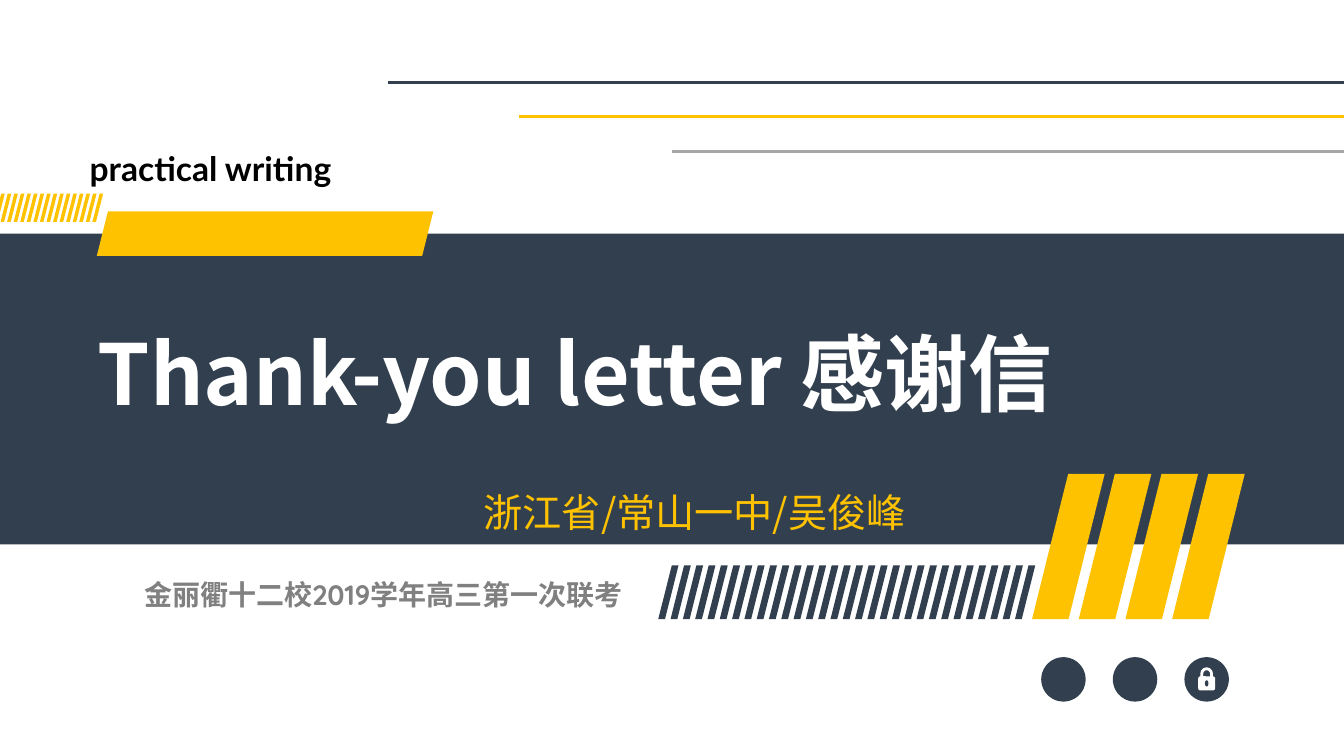
import dataclasses

import lxml.etree
import pptx
import pptx.dml.color
import pptx.enum.shapes
import pptx.enum.text
import pptx.oxml.ns
import pptx.util

Cm = pptx.util.Cm
Pt = pptx.util.Pt
Shape = pptx.enum.shapes.MSO_SHAPE
Align = pptx.enum.text.PP_ALIGN


@dataclasses.dataclass(frozen=True)
class Theme:
    navy: str = "323F4F"
    yellow: str = "FFC200"
    rule_gray: str = "A6A6A6"
    text_gray: str = "808080"
    white: str = "FFFFFF"
    black: str = "000000"
    title_size: int = 60
    author_size: int = 28
    label_size: int = 24
    exam_size: int = 20
    rule_width: float = 2.25
    title_font: str = "Noto Sans CJK SC"
    label_font: str = "Lato"
    exam_font: str = "Quicksand"


@dataclasses.dataclass(frozen=True)
class Box:
    """A rectangle in centimetres."""
    left: float
    top: float
    width: float
    height: float

    def inner(self, x, y, width, height):
        """Return the box at the given fractions of this one."""
        return Box(self.left + x * self.width, self.top + y * self.height,
                   width * self.width, height * self.height)

    def lengths(self):
        return Cm(self.left), Cm(self.top), Cm(self.width), Cm(self.height)


THEME = Theme()


def rgb(color):
    return pptx.dml.color.RGBColor.from_string(color)


def paint(shape, color):
    shape.shadow.inherit = False
    shape.fill.solid()
    shape.fill.fore_color.rgb = rgb(color)
    shape.line.fill.background()


def add_block(slide, kind, box, color):
    shape = slide.shapes.add_shape(kind, *box.lengths())
    paint(shape, color)
    return shape


def add_text(slide, box, text, *, size, color, font, bold=False,
             align=Align.LEFT, spacing=1.2, wrap=True):
    text_frame = slide.shapes.add_textbox(*box.lengths()).text_frame
    text_frame.word_wrap = wrap
    text_frame.auto_size = pptx.enum.text.MSO_AUTO_SIZE.SHAPE_TO_FIT_TEXT
    paragraph = text_frame.paragraphs[0]
    paragraph.alignment = align
    paragraph.line_spacing = spacing
    run = paragraph.add_run()
    run.text = text
    run.font.name = font
    run.font.size = Pt(size)
    run.font.bold = bold
    run.font.color.rgb = rgb(color)
    # Chinese characters take their own typeface
    east_asian = lxml.etree.SubElement(run.font._element, pptx.oxml.ns.qn("a:ea"))
    east_asian.set("typeface", THEME.title_font)


def add_stripes(slide, box, count, thickness, skew, color):
    """Spread slanted stripes evenly from the left to the right of the box."""
    step = (box.width - thickness - skew) / (count - 1)
    bottom = box.top + box.height
    for index in range(count):
        left = box.left + index * step
        corners = [(left + skew, box.top), (left + skew + thickness, box.top),
                   (left + thickness, bottom), (left, bottom)]
        points = [(Cm(x), Cm(y)) for x, y in corners]
        builder = slide.shapes.build_freeform(*points[0])
        builder.add_line_segments(points[1:], close=True)
        paint(builder.convert_to_shape(), color)


def add_rules(slide, box):
    """Three lines that start further right each time and end at the edge."""
    rules = [(0, THEME.navy), (3.3, THEME.yellow), (7.15, THEME.rule_gray)]
    step = box.height / (len(rules) - 1)
    for index, (indent, color) in enumerate(rules):
        y = Cm(box.top + index * step)
        rule = slide.shapes.add_connector(
            pptx.enum.shapes.MSO_CONNECTOR.STRAIGHT,
            Cm(box.left + indent), y, Cm(box.left + box.width), y)
        rule.line.color.rgb = rgb(color)
        rule.line.width = Pt(THEME.rule_width)
        lxml.etree.SubElement(rule._element.spPr, pptx.oxml.ns.qn("a:effectLst"))


def add_band(slide, box):
    """Navy band with the yellow tab, the title and the author."""
    left, top = box.left, box.top
    add_block(slide, Shape.RECTANGLE, box, THEME.navy)
    add_block(slide, Shape.PARALLELOGRAM, Box(left + 2.44, top - 0.56, 8.48, 1.12),
              THEME.yellow)
    add_text(slide, Box(left + 2.21, top + 1.58, 29.13, 3.33), "Thank-you letter 感谢信",
             size=THEME.title_size, color=THEME.white, font=THEME.title_font,
             bold=True, align=Align.JUSTIFY)
    add_text(slide, Box(left + 11.94, top + 6.05, 14.07, 1.68), "浙江省/常山一中/吴俊峰",
             size=THEME.author_size, color=THEME.yellow, font=THEME.title_font,
             align=Align.JUSTIFY)


def add_heading(slide, box):
    """Label above the band, with small yellow stripes under it."""
    add_text(slide, Box(box.left + 2.16, box.top, 9.35, 1.37), "practical writing",
             size=THEME.label_size, color=THEME.black, font=THEME.label_font,
             bold=True, spacing=1.1, wrap=False)
    add_stripes(slide, Box(box.left, box.top + 1.37, 2.75, 0.71), 16, 0.09, 0.18,
                THEME.yellow)


def add_footer(slide, box):
    """Exam name, navy stripes and four large yellow slashes."""
    add_text(slide, Box(box.left, box.top, 13.21, 1.27), "金丽衢十二校2019学年高三第一次联考",
             size=THEME.exam_size, color=THEME.text_gray, font=THEME.exam_font,
             bold=True)
    add_stripes(slide, Box(box.left + 13.21, box.top, 9.5, box.height), 30, 0.17, 0.34,
                THEME.navy)
    add_stripes(slide, Box(box.left + 22.63, box.top - 2.31, 5.36, box.height + 2.31),
                4, 0.92, 0.91, THEME.yellow)


def add_icons(slide, box):
    """Three round badges; the last one holds a padlock."""
    size = box.height
    step = (box.width - size) / 2
    badges = [Box(box.left + index * step, box.top, size, size) for index in range(3)]
    for badge in badges:
        add_block(slide, Shape.OVAL, badge, THEME.navy)

    lock = badges[-1]
    shackle = add_block(slide, Shape.ROUNDED_RECTANGLE, lock.inner(0.39, 0.26, 0.22, 0.34),
                        THEME.navy)
    shackle.adjustments[0] = 0.5
    shackle.line.color.rgb = rgb(THEME.white)
    shackle.line.width = Pt(2)
    add_block(slide, Shape.ROUNDED_RECTANGLE, lock.inner(0.31, 0.43, 0.38, 0.32),
              THEME.white)
    add_block(slide, Shape.OVAL, lock.inner(0.46, 0.52, 0.08, 0.14), THEME.navy)


def main():
    presentation = pptx.Presentation()
    presentation.slide_width = Cm(33.87)
    presentation.slide_height = Cm(19.05)
    slide = presentation.slides.add_slide(presentation.slide_layouts[6])
    add_band(slide, Box(0, 5.89, 33.87, 7.83))
    add_rules(slide, Box(9.78, 2.08, 24.09, 1.73))
    add_footer(slide, Box(3.38, 14.25, 27.99, 1.35))
    add_heading(slide, Box(-0.15, 3.51, 11.51, 2.08))
    add_icons(slide, Box(26.24, 16.56, 4.73, 1.12))
    presentation.save("out.pptx")


if __name__ == "__main__":
    main()
